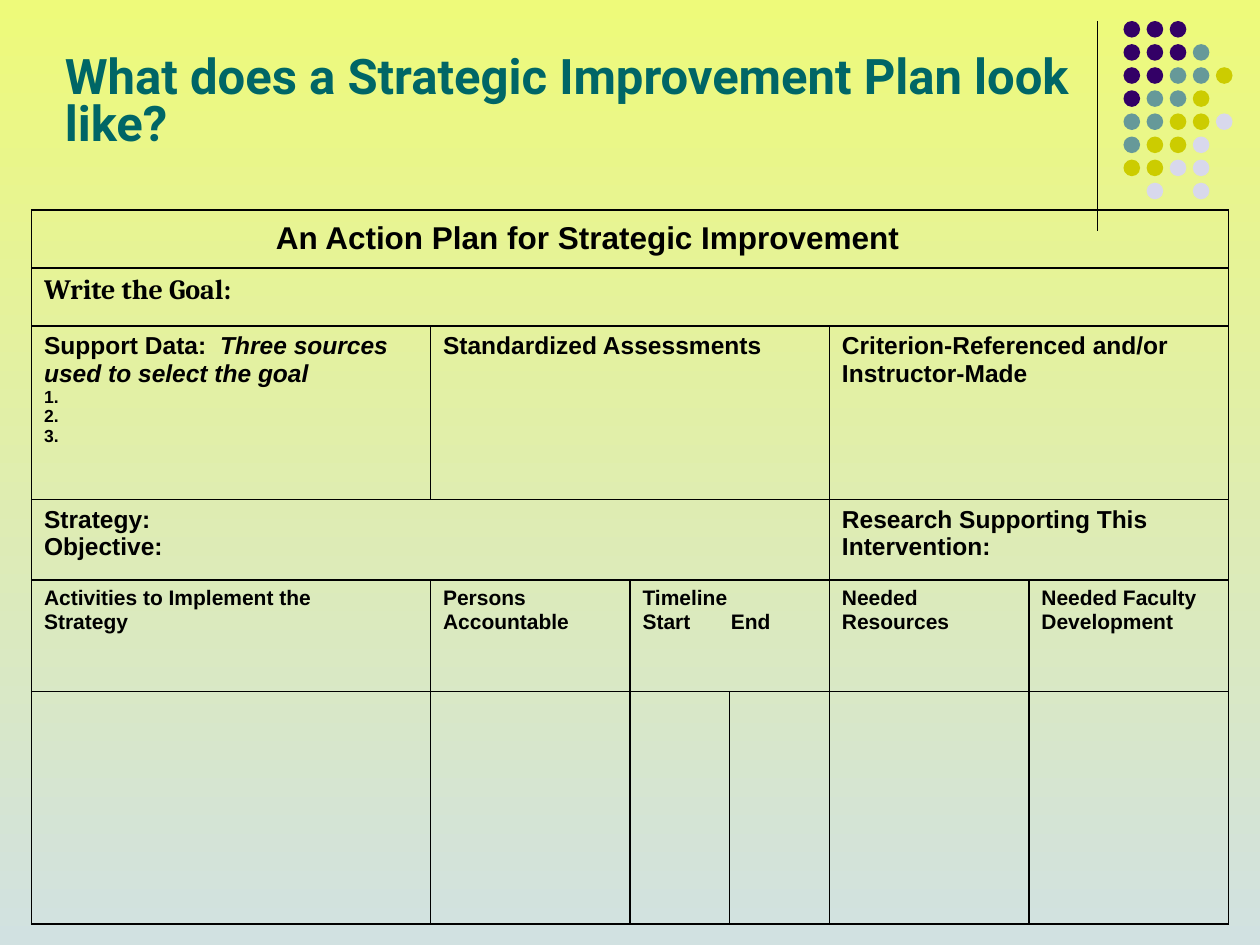
"""Build the strategic improvement plan slide."""
from dataclasses import dataclass
from typing import NamedTuple

from lxml.etree import SubElement
from pptx import Presentation
from pptx.dml.color import RGBColor
from pptx.enum.shapes import MSO_CONNECTOR, MSO_SHAPE
from pptx.enum.text import PP_ALIGN
from pptx.oxml.ns import qn
from pptx.slide import Slide
from pptx.table import Table
from pptx.util import Pt


@dataclass(frozen=True)
class Theme:
    bg_top: str = "EEFA7A"
    bg_bottom: str = "D1E1E1"
    ink: str = "000000"
    title: str = "006666"
    purple: str = "330066"
    teal: str = "669999"
    olive: str = "CCCC00"
    lilac: str = "D8D8EC"
    sans: str = "Arial"
    serif: str = "Cambria"
    display: str = "Roboto"
    title_size: float = 28
    banner_size: float = 18
    goal_size: float = 16
    label_size: float = 14
    column_size: float = 12
    list_size: float = 10
    rule: float = 0.75
    border: float = 1


THEME = Theme()


class Run(NamedTuple):
    text: str
    size: float
    font: str = THEME.sans
    color: str = THEME.ink
    italic: bool = False


class Cell(NamedTuple):
    row: int
    col: int
    span: int
    paras: list[list[Run]]


class Label(NamedTuple):
    left: float
    top: float
    width: float
    height: float
    run: Run
    align: PP_ALIGN


def lines(size: float, *texts: str) -> list[list[Run]]:
    return [[Run(text, size)] for text in texts]


LABELS = [
    Label(131.8, 125.3, 408, 24.5,
          Run("An Action Plan for Strategic Improvement", THEME.banner_size),
          PP_ALIGN.CENTER),
    Label(30, 28.8, 594, 61.2,
          Run("What does a Strategic Improvement Plan look like?",
              THEME.title_size, THEME.display, THEME.title),
          PP_ALIGN.LEFT),
]

COL_UNIT = 57
COL_UNITS = [4, 2, 1, 1, 2, 2]
ROW_HEIGHTS = [33.2, 33.2, 99.2, 46, 63.7, 132.7]
TAB_STOP = 50.5
CELLS = [
    Cell(0, 0, 6, []),
    Cell(1, 0, 6, [[Run("Write the Goal:", THEME.goal_size, THEME.serif)]]),
    Cell(2, 0, 1, [
        [Run("Support Data:  ", THEME.label_size),
         Run("Three sources used to select the goal", THEME.label_size, italic=True)],
        *lines(THEME.list_size, "1.", "2.", "3."),
    ]),
    Cell(2, 1, 3, lines(THEME.label_size, "Standardized Assessments")),
    Cell(2, 4, 2, lines(THEME.label_size, "Criterion-Referenced and/or Instructor-Made")),
    Cell(3, 0, 4, lines(THEME.label_size, "Strategy:", "Objective:")),
    Cell(3, 4, 2, lines(THEME.label_size, "Research Supporting This Intervention:")),
    Cell(4, 0, 1, lines(THEME.column_size, "Activities to Implement the", "Strategy")),
    Cell(4, 1, 1, lines(THEME.column_size, "Persons", "Accountable")),
    Cell(4, 2, 2, lines(THEME.column_size, "Timeline", "Start\tEnd")),
    Cell(4, 4, 1, lines(THEME.column_size, "Needed Resources")),
    Cell(4, 5, 1, lines(THEME.column_size, "Needed Faculty Development")),
]

DOT_ROWS = ["PPP", "PPPT", "PPTTO", "PTTO", "TTOOL", "TOOL", "OOLL", " L L"]
DOT_COLORS = {"P": THEME.purple, "T": THEME.teal, "O": THEME.olive, "L": THEME.lilac}
DOT_LEFT, DOT_TOP, DOT_PITCH, DOT_SIZE = 642, 12, 13.2, 9.5


def rgb(value: str) -> RGBColor:
    return RGBColor.from_string(value)


def add_run(p, run: Run) -> None:
    r = p.add_run()
    r.text = run.text
    r.font.size = Pt(run.size)
    r.font.name = run.font
    r.font.bold = True
    r.font.italic = run.italic
    r.font.color.rgb = rgb(run.color)


def set_background(s: Slide) -> None:
    fill = s.background.fill
    fill.gradient()
    fill.gradient_angle = 270
    for stop, color in zip(fill.gradient_stops, (THEME.bg_top, THEME.bg_bottom)):
        stop.color.rgb = rgb(color)


def add_rule(s: Slide, x: float, top: float, bottom: float) -> None:
    cxn = s.shapes.add_connector(MSO_CONNECTOR.STRAIGHT, Pt(x), Pt(top), Pt(x), Pt(bottom))
    cxn.line.color.rgb = rgb(THEME.ink)
    cxn.line.width = Pt(THEME.rule)
    SubElement(cxn._element.spPr, qn("a:effectLst"))


def add_dots(s: Slide) -> None:
    group = s.shapes.add_group_shape()
    for i, row in enumerate(DOT_ROWS):
        for j, key in enumerate(row):
            if key not in DOT_COLORS:
                continue
            sp = group.shapes.add_shape(
                MSO_SHAPE.OVAL, Pt(DOT_LEFT + j * DOT_PITCH), Pt(DOT_TOP + i * DOT_PITCH),
                Pt(DOT_SIZE), Pt(DOT_SIZE))
            sp.shadow.inherit = False
            sp.fill.solid()
            sp.fill.fore_color.rgb = rgb(DOT_COLORS[key])
            sp.line.fill.background()


def style_cells(table: Table) -> None:
    for cell in table.iter_cells():
        tc_pr = cell._tc.get_or_add_tcPr()
        for side in ("a:lnL", "a:lnR", "a:lnT", "a:lnB"):
            ln = SubElement(tc_pr, qn(side), w=str(Pt(THEME.border)))
            fill = SubElement(ln, qn("a:solidFill"))
            SubElement(fill, qn("a:srgbClr"), val=THEME.ink)
        cell.fill.background()


def fill_cell(table: Table, item: Cell) -> None:
    cell = table.cell(item.row, item.col)
    if item.span > 1:
        cell.merge(table.cell(item.row, item.col + item.span - 1))
    tf = cell.text_frame
    for i, runs in enumerate(item.paras):
        p = tf.add_paragraph() if i else tf.paragraphs[0]
        for run in runs:
            add_run(p, run)
            if "\t" in run.text:
                tabs = SubElement(p._p.get_or_add_pPr(), qn("a:tabLst"))
                SubElement(tabs, qn("a:tab"), pos=str(Pt(TAB_STOP)), algn="l")


def add_plan(s: Slide) -> None:
    table = s.shapes.add_table(len(ROW_HEIGHTS), len(COL_UNITS), Pt(18), Pt(120),
                               Pt(COL_UNIT * sum(COL_UNITS)), Pt(sum(ROW_HEIGHTS))).table
    table.first_row = table.horz_banding = False
    for col, units in zip(table.columns, COL_UNITS):
        col.width = Pt(units * COL_UNIT)
    for row, height in zip(table.rows, ROW_HEIGHTS):
        row.height = Pt(height)
    style_cells(table)
    for item in CELLS:
        fill_cell(table, item)


def add_label(s: Slide, label: Label) -> None:
    sp = s.shapes.add_textbox(Pt(label.left), Pt(label.top), Pt(label.width), Pt(label.height))
    tf = sp.text_frame
    tf.word_wrap = True
    p = tf.paragraphs[0]
    p.alignment = label.align
    p.line_spacing = 0.8
    add_run(p, label.run)


def main() -> None:
    prs = Presentation()
    prs.slide_width, prs.slide_height = Pt(720), Pt(540)
    s = prs.slides.add_slide(prs.slide_layouts[6])
    set_background(s)
    add_rule(s, 627, 12, 132)
    add_dots(s)
    add_plan(s)
    for label in LABELS:
        add_label(s, label)
    prs.save("out.pptx")


if __name__ == "__main__":
    main()
